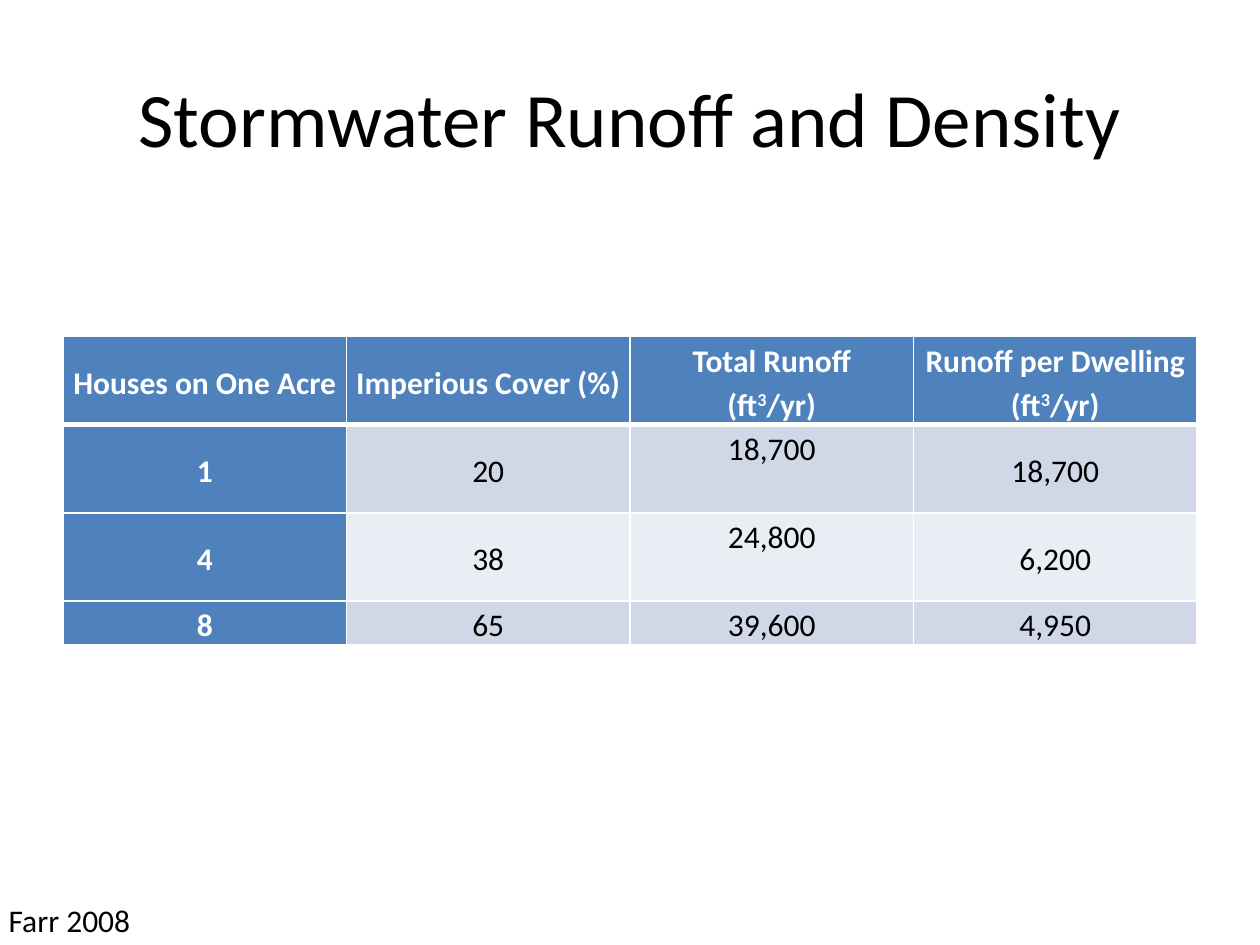
from dataclasses import dataclass

from lxml.etree import SubElement
from pptx import Presentation
from pptx.dml.color import RGBColor
from pptx.enum.text import MSO_ANCHOR, MSO_AUTO_SIZE, PP_ALIGN
from pptx.oxml.ns import qn
from pptx.util import Inches, Pt

TITLE = "Stormwater Runoff and Density"
SOURCE = "Farr 2008"
CUBIC_FEET = [("(ft", 0), ("3", 30), ("/yr)", 0)]
HEADERS = [
    [[("Houses on One Acre", 0)]],
    [[("Imperious Cover (%)", 0)]],
    [[("Total Runoff", 0)], CUBIC_FEET],
    [[("Runoff per Dwelling ", 0)] + CUBIC_FEET],
]
RECORDS = [
    ("1", "20", "18,700", "18,700"),
    ("4", "38", "24,800", "6,200"),
    ("8", "65", "39,600", "4,950"),
]
LINES_PER_ROW = (2, 2, 2, 1)
TOTAL_RUNOFF_COLUMN = 2


@dataclass(frozen=True)
class Theme:
    font: str = "Calibri"
    title_size: int = 44
    body_size: int = 18
    ink: str = "000000"
    paper: str = "FFFFFF"
    accent: str = "4F81BD"
    bands: tuple = ("D0D8E8", "E9EDF4")
    thin: int = 1
    thick: int = 3


THEME = Theme()
SLIDE_WIDTH, SLIDE_HEIGHT = 10, 7.5
MARGIN = SLIDE_WIDTH * 0.05
CONTENT_WIDTH = SLIDE_WIDTH - 2 * MARGIN
TABLE_TOP = 2.67
LINE_HEIGHT = 0.35


def add_span(para, text, size, color, bold=False, baseline=0):
    span = para.add_run()
    span.text = text
    span.font.name = THEME.font
    span.font.size = Pt(size)
    span.font.bold = bold
    span.font.color.rgb = RGBColor.from_string(color)
    if baseline:
        span.font._element.set("baseline", str(baseline * 1000))


def add_text(page, area, text, size):
    box = page.shapes.add_textbox(*map(Inches, area))
    add_span(box.text_frame.paragraphs[0], text, size, THEME.ink)
    return box.text_frame


def set_borders(cell, bottom):
    properties = cell._tc.get_or_add_tcPr()
    widths = {"L": THEME.thin, "R": THEME.thin, "T": THEME.thin, "B": bottom}
    for position, (side, width) in enumerate(widths.items()):
        line = properties.makeelement(qn(f"a:ln{side}"), {"w": str(Pt(width))})
        fill = SubElement(line, qn("a:solidFill"))
        SubElement(fill, qn("a:srgbClr"), val=THEME.paper)
        properties.insert(position, line)


def fill_cell(cell, paragraphs, row, column):
    strong = row == 0 or column == 0
    background = THEME.accent if strong else THEME.bands[(row - 1) % 2]
    cell.fill.solid()
    cell.fill.fore_color.rgb = RGBColor.from_string(background)
    set_borders(cell, THEME.thick if row == 0 else THEME.thin)
    cell.margin_left = cell.margin_right = Inches(0.07)
    cell.margin_top = cell.margin_bottom = 0
    raised = row > 0 and column == TOTAL_RUNOFF_COLUMN
    cell.vertical_anchor = MSO_ANCHOR.TOP if raised else MSO_ANCHOR.MIDDLE
    frame = cell.text_frame
    for index, spans in enumerate(paragraphs):
        para = frame.add_paragraph() if index else frame.paragraphs[0]
        para.alignment = PP_ALIGN.CENTER
        para.line_spacing = 1.15
        for text, baseline in spans:
            color = THEME.paper if strong else THEME.ink
            add_span(para, text, THEME.body_size, color, strong, baseline)


def add_runoff_table(page):
    rows = [HEADERS] + [[[[(value, 0)]] for value in record] for record in RECORDS]
    height = LINE_HEIGHT * sum(LINES_PER_ROW)
    area = (MARGIN, TABLE_TOP, CONTENT_WIDTH, height)
    table = page.shapes.add_table(len(rows), len(HEADERS), *map(Inches, area)).table
    table.first_col = True
    for column in table.columns:
        column.width = Inches(CONTENT_WIDTH / len(HEADERS))
    for row, lines in zip(table.rows, LINES_PER_ROW):
        row.height = Inches(LINE_HEIGHT * lines)
    for row, cells in enumerate(rows):
        for column, paragraphs in enumerate(cells):
            fill_cell(table.cell(row, column), paragraphs, row, column)


def main():
    deck = Presentation()
    deck.slide_width, deck.slide_height = Inches(SLIDE_WIDTH), Inches(SLIDE_HEIGHT)
    page = deck.slides.add_slide(deck.slide_layouts[6])
    title_area = (MARGIN, SLIDE_HEIGHT * 0.04, CONTENT_WIDTH, 1.25)
    title = add_text(page, title_area, TITLE, THEME.title_size)
    title.word_wrap = True
    title.vertical_anchor = MSO_ANCHOR.MIDDLE
    title.paragraphs[0].alignment = PP_ALIGN.CENTER
    add_runoff_table(page)
    source_area = (-0.03, SLIDE_HEIGHT - 0.4, 1.18, 0.4)
    source = add_text(page, source_area, SOURCE, THEME.body_size)
    source.word_wrap = False
    source.auto_size = MSO_AUTO_SIZE.SHAPE_TO_FIT_TEXT
    deck.save("out.pptx")


if __name__ == "__main__":
    main()
